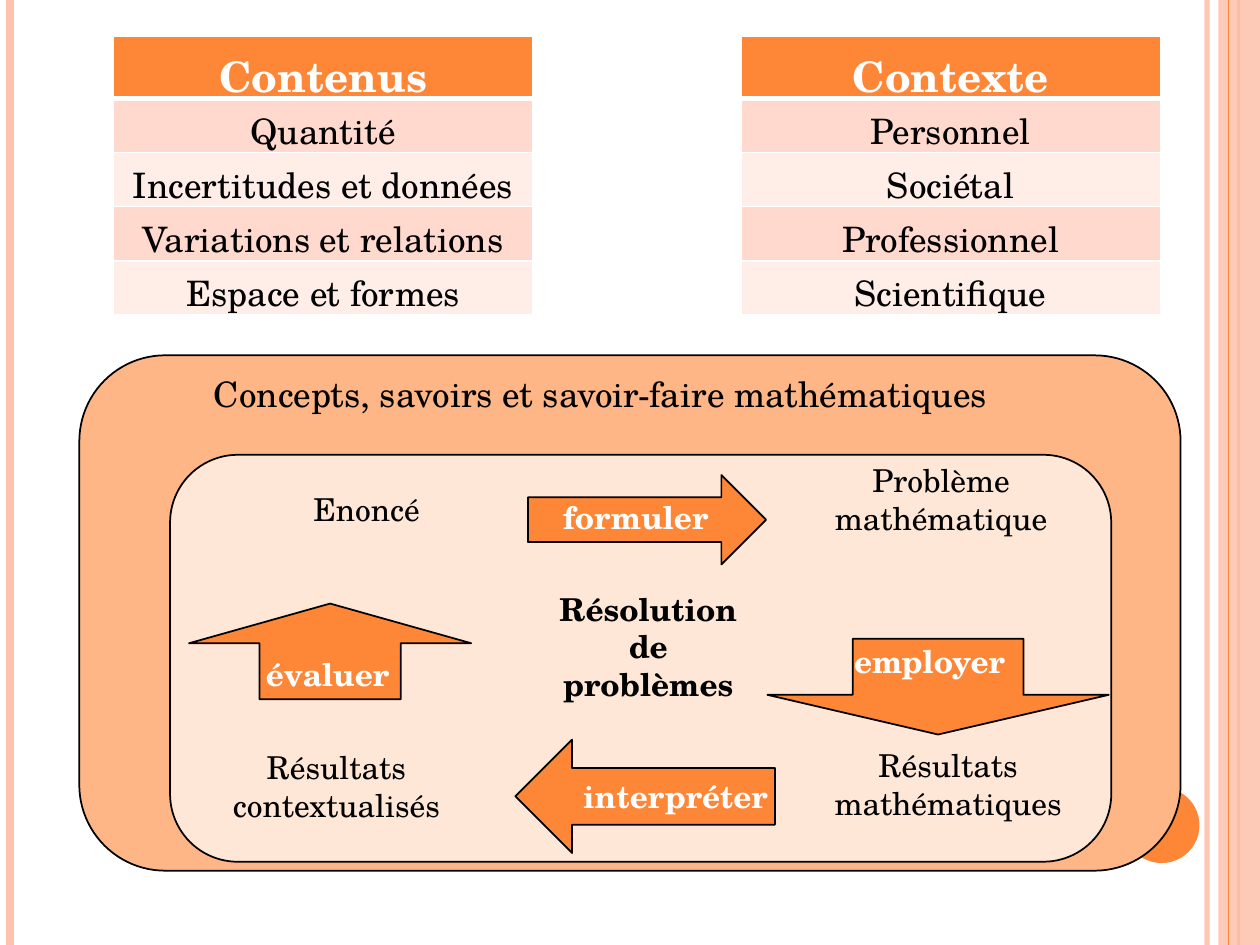
import dataclasses

import lxml.etree
import pptx
import pptx.dml.color
import pptx.enum.shapes
import pptx.enum.text
import pptx.oxml.ns
import pptx.util

Inches = pptx.util.Inches
Pt = pptx.util.Pt
qn = pptx.oxml.ns.qn
Shape = pptx.enum.shapes.MSO_SHAPE
Align = pptx.enum.text.PP_ALIGN
Anchor = pptx.enum.text.MSO_ANCHOR


@dataclasses.dataclass(frozen=True)
class Theme:
    font: str = "TeX Gyre Schola"
    orange: str = "FE8637"
    stripe: str = "FEC3AE"
    frame: str = "FEB687"
    panel: str = "FFE7D7"
    bands: tuple = ("FFD9CE", "FFEDE8")
    black: str = "000000"
    white: str = "FFFFFF"
    header: int = 24
    body: int = 20
    label: int = 18


THEME = Theme()

STRIPES = [
    (9.58, THEME.stripe, 3, 93),
    (0.08, THEME.stripe, 4.5, 100),
    (9.83, THEME.orange, 1.5, 100),
]
THIN_STRIPE = (9.75, THEME.orange, 0.75, 100)

FRAME_TITLE = "Concepts, savoirs et savoir-faire mathématiques"
STAGES = [
    ("Enoncé", (1.81, 3.84, 2.2, 0.4), False),
    ("Problème mathématique", (6.37, 3.61, 2.2, 0.71), False),
    ("Résultats contextualisés", (1.57, 5.89, 2.2, 0.71), False),
    ("Résultats mathématiques", (6.22, 5.87, 2.61, 0.71), False),
    ("Résolution de problèmes", (4.25, 4.63, 1.79, 1.01), True),
]
FLAT_HEAD = (0.5, 0.414)
STEPS = [
    ("formuler", Shape.RIGHT_ARROW, (4.19, 3.77, 1.89, 0.71), 0, (),
     (4.37, 3.9, 1.89, 0.4), Align.LEFT),
    ("employer", Shape.DOWN_ARROW, (6.09, 5.07, 2.71, 0.76), 0, FLAT_HEAD,
     (6.68, 5.05, 1.58, 0.4), Align.LEFT),
    ("interpréter", Shape.RIGHT_ARROW, (4.09, 5.87, 2.06, 0.9), 180, (),
     (4.53, 6.12, 2.4, 0.4), Align.LEFT),
    ("évaluer", Shape.DOWN_ARROW, (1.5, 4.79, 2.24, 0.76), 180, FLAT_HEAD,
     (1.97, 5.15, 1.26, 0.4), Align.CENTER),
]
TABLES = [
    (5.88, ["Contexte", "Personnel", "Sociétal", "Professionnel", "Scientifique"]),
    (0.9, ["Contenus", "Quantité", "Incertitudes et données",
           "Variations et relations", "Espace et formes"]),
]
TABLE_TOP, TABLE_WIDTH = 0.29, 3.33
HEADER_HEIGHT, ROW_HEIGHT = 0.49, 0.43


def rgb(color):
    return pptx.dml.color.RGBColor.from_string(color)


def set_alpha(element, percent):
    color = next(element.iter(qn("a:srgbClr")))
    lxml.etree.SubElement(color, qn("a:alpha")).set("val", str(percent * 1000))


def write(frame, text, size, color, bold=False, align=Align.CENTER):
    frame.text = text
    frame.word_wrap = True
    para = frame.paragraphs[0]
    para.alignment = align
    font = para.runs[0].font
    font.name, font.size, font.bold = THEME.font, Pt(size), bold
    font.color.rgb = rgb(color)
    return para


def add_box(shapes, kind, place, fill, outlined=False):
    box = shapes.add_shape(kind, *map(Inches, place))
    box.shadow.inherit = False
    box.fill.solid()
    box.fill.fore_color.rgb = rgb(fill)
    if outlined:
        box.line.color.rgb = rgb(THEME.black)
        box.line.width = Pt(1)
    else:
        box.line.fill.background()
    return box


def add_label(shapes, text, place, color, bold, align=Align.CENTER):
    box = shapes.add_textbox(*map(Inches, place))
    write(box.text_frame, text, THEME.label, color, bold, align)


def add_stripe(page, x, color, width, opacity):
    stripe = page.shapes.add_connector(
        pptx.enum.shapes.MSO_CONNECTOR.STRAIGHT,
        Inches(x), Inches(0), Inches(x), Inches(7.5))
    stripe.line.color.rgb = rgb(color)
    stripe.line.width = Pt(width)
    properties = stripe._element.spPr
    if opacity < 100:
        set_alpha(properties, opacity)
    lxml.etree.SubElement(properties, qn("a:effectLst"))


def add_background(page):
    for stripe in STRIPES:
        add_stripe(page, *stripe)
    band = add_box(page.shapes, Shape.RECTANGLE, (9.67, 0, 0.33, 7.5), THEME.stripe)
    set_alpha(band._element.spPr, 87)
    add_stripe(page, *THIN_STRIPE)
    add_box(page.shapes, Shape.OVAL, (8.92, 6.25, 0.6, 0.6), THEME.orange)


def add_frame(page):
    shapes = page.shapes.add_group_shape().shapes
    add_box(shapes, Shape.ROUNDED_RECTANGLE, (0.63, 2.82, 8.74, 4.09), THEME.frame, True)
    title = add_box(shapes, Shape.RECTANGLE, (1.1, 2.9, 7.8, 0.44), THEME.frame)
    para = write(title.text_frame, FRAME_TITLE, THEME.body, THEME.black, align=Align.LEFT)
    para._p.get_or_add_pPr().set("marL", str(Inches(0.5)))
    add_box(page.shapes, Shape.ROUNDED_RECTANGLE, (1.35, 3.61, 7.47, 3.23), THEME.panel, True)


def add_step(page, text, kind, place, turn, adjustments, label_place, align):
    shapes = page.shapes.add_group_shape().shapes
    arrow = add_box(shapes, kind, place, THEME.orange, True)
    arrow.rotation = turn
    for index, value in enumerate(adjustments):
        arrow.adjustments[index] = value
    add_label(shapes, text, label_place, THEME.white, True, align)


def set_borders(cell, top, bottom):
    properties = cell._tc.get_or_add_tcPr()
    for index, (side, width) in enumerate(
            [("L", 1), ("R", 1), ("T", top), ("B", bottom)]):
        line = lxml.etree.Element(qn("a:ln" + side), w=str(Pt(width)))
        fill = lxml.etree.SubElement(line, qn("a:solidFill"))
        lxml.etree.SubElement(fill, qn("a:srgbClr")).set("val", THEME.white)
        properties.insert(index, line)


def add_list_table(page, left, rows):
    heights = [HEADER_HEIGHT] + [ROW_HEIGHT] * (len(rows) - 1)
    table = page.shapes.add_table(
        len(rows), 1, Inches(left), Inches(TABLE_TOP),
        Inches(TABLE_WIDTH), Inches(sum(heights))).table
    for index, (text, height) in enumerate(zip(rows, heights)):
        table.rows[index].height = Inches(height)
        cell = table.cell(index, 0)
        cell.margin_top, cell.margin_bottom = Inches(0.05), Inches(0)
        cell.vertical_anchor = Anchor.BOTTOM
        header = index == 0
        cell.fill.solid()
        cell.fill.fore_color.rgb = rgb(THEME.orange if header else THEME.bands[(index - 1) % 2])
        write(cell.text_frame, text, THEME.header if header else THEME.body,
              THEME.white if header else THEME.black, header)
        set_borders(cell, 3 if index == 1 else 1, 3 if header else 1)


def main():
    """Build the slide on solving mathematical problems."""
    deck = pptx.Presentation()
    deck.slide_width, deck.slide_height = Inches(10), Inches(7.5)
    page = deck.slides.add_slide(deck.slide_layouts[6])
    add_background(page)
    add_frame(page)
    for step in STEPS:
        add_step(page, *step)
    for text, place, bold in STAGES:
        add_label(page.shapes, text, place, THEME.black, bold)
    for left, rows in TABLES:
        add_list_table(page, left, rows)
    deck.save("out.pptx")


if __name__ == "__main__":
    main()
